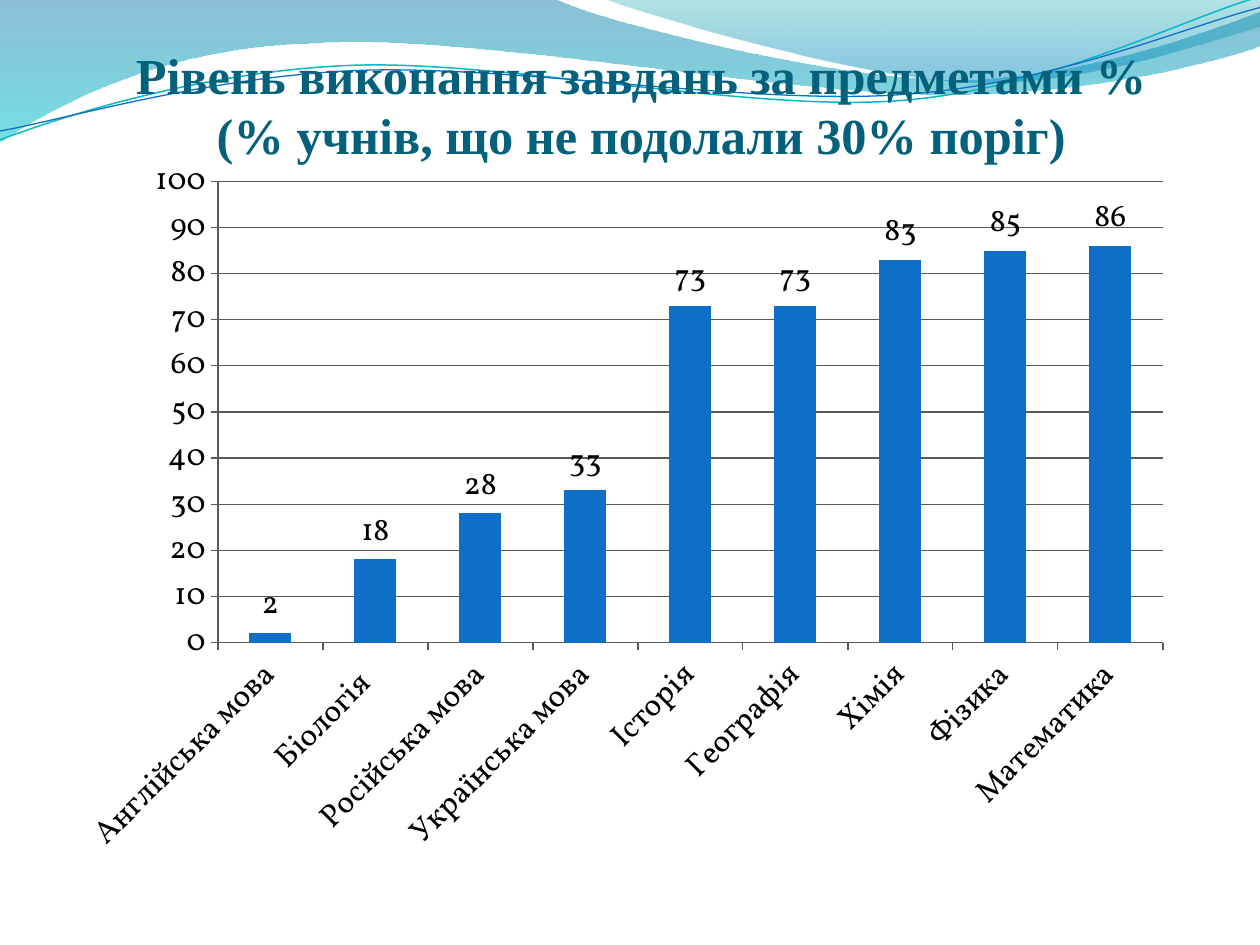
"""Build a slide with a column chart of subject results under a wave header."""
from dataclasses import dataclass

from lxml import etree
from pptx import Presentation
from pptx.chart.data import CategoryChartData
from pptx.dml.color import RGBColor
from pptx.enum.chart import XL_CHART_TYPE, XL_LABEL_POSITION, XL_TICK_MARK
from pptx.enum.text import MSO_ANCHOR, PP_ALIGN
from pptx.oxml.ns import qn
from pptx.util import Inches, Pt

COLUMN_CLUSTERED = XL_CHART_TYPE.COLUMN_CLUSTERED
OUTSIDE_END = XL_LABEL_POSITION.OUTSIDE_END
TICK_OUTSIDE = XL_TICK_MARK.OUTSIDE
TICK_NONE = XL_TICK_MARK.NONE
BOTTOM = MSO_ANCHOR.BOTTOM
CENTER = PP_ALIGN.CENTER


@dataclass(frozen=True)
class Theme:
    title_color: str = "04617B"
    accent: str = "0F6FC6"
    teal: str = "0AB8BF"
    text: str = "000000"
    axis: str = "595959"
    title_font: str = "Times New Roman"
    chart_font: str = "Vollkorn"
    title_size: float = 28.8
    chart_size: float = 18
    wide_wave: tuple = ((0, "0074A1", 45), (1, "00C6CF", 55))
    right_wave: tuple = ((0, "00A1A9", 30), (0.8, "008BBF", 45))


theme = Theme()
COLUMNS, ROWS = 10, 7.5
CELL = Inches(1)
TITLE_BOX = (0.59, 0.37, 9, 0.94)
CHART_BOX = (0.5, 1.15, 8.91, 5.77)
PLOT_BOX = (1.73, 1.44, 7.5, 3.66)

presentation = Presentation()
presentation.slide_width = int(COLUMNS * CELL)
presentation.slide_height = int(ROWS * CELL)
slide = presentation.slides.add_slide(presentation.slide_layouts[6])


def draw_outline(start, segments, close):
    """Add a freeform whose six-number segments are cubic curves."""
    ends = [(round(segment[-2] * CELL), round(segment[-1] * CELL)) for segment in segments]
    builder = slide.shapes.build_freeform(round(start[0] * CELL), round(start[1] * CELL))
    builder.add_line_segments(ends, close=close)
    shape = builder.convert_to_shape()
    shape.shadow.inherit = False
    for element, segment in zip(shape.element.xpath(".//a:path/a:lnTo"), segments):
        if len(segment) == 2:
            continue
        element.tag = qn("a:cubicBezTo")
        element.remove(element[0])
        for x, y in zip(segment[::2], segment[1::2]):
            point = etree.SubElement(element, qn("a:pt"))
            point.set("x", str(round(x * CELL) - shape.left))
            point.set("y", str(round(y * CELL) - shape.top))
    return shape


waves = [
    (theme.wide_wave, (0, 0), [
        (4.4, -0.01), (4.76, 0.17, 6.64, 0.63, 7.58, 0.63),
        (8.53, 0.63, 9.58, 0.26, 10, 0.09), (10.01, 0.36),
        (9.83, 0.44, 8.7, 0.76, 7.46, 0.75), (6.22, 0.75, 3.82, 0.28, 2.57, 0.34),
        (1.29, 0.36, 0.46, 0.83, -0.01, 1.13), (0, 0)]),
    (theme.right_wave, (4.79, -0.01), [
        (5.09, 0.11, 6.82, 0.62, 7.69, 0.65), (8.56, 0.69, 9.61, 0.32, 10, 0.21),
        (10, 0), (4.79, -0.01)]),
]
for stops, start, segments in waves:
    wave = draw_outline(start, segments, True)
    wave.line.fill.background()
    wave.fill.gradient()
    wave.fill.gradient_angle = 270
    for stop, (position, color, opacity) in zip(wave.fill.gradient_stops, stops):
        stop.position = position
        stop.color.rgb = RGBColor.from_string(color)
    for element, (position, color, opacity) in zip(
            wave.element.xpath(".//a:gs/a:srgbClr"), stops):
        etree.SubElement(element, qn("a:alpha")).set("val", str(opacity * 1000))

ribbons = [
    (theme.teal, 0.85, (0, 1.11), [
        (0.48, 0.93, 1.58, 0.57, 2.77, 0.52), (3.95, 0.47, 5.93, 0.89, 7.13, 0.8),
        (8.33, 0.71, 9.38, 0.15, 9.98, -0.02)]),
    (theme.accent, 0.75, (0, 1.04), [
        (0.47, 0.96, 1.64, 0.61, 2.83, 0.56), (4.03, 0.51, 5.97, 0.84, 7.17, 0.75),
        (8.36, 0.67, 9.41, 0.21, 10, 0.06)]),
]
for color, width, start, segments in ribbons:
    ribbon = draw_outline(start, segments, False)
    ribbon.fill.background()
    ribbon.line.color.rgb = RGBColor.from_string(color)
    ribbon.line.width = Pt(width)

title = slide.shapes.add_textbox(*(int(cells * CELL) for cells in TITLE_BOX))
frame = title.text_frame
frame.word_wrap = True
frame.vertical_anchor = BOTTOM
frame.margin_left = frame.margin_right = frame.margin_bottom = 0
frame.margin_top = int(0.05 * CELL)
paragraph = frame.paragraphs[0]
paragraph.text = "Рівень виконання завдань за предметами %\n(% учнів, що не подолали 30% поріг)"
paragraph.alignment = CENTER
for run in paragraph.runs:
    run.font.name = theme.title_font
    run.font.size = Pt(theme.title_size)
    run.font.bold = True
    run.font.color.rgb = RGBColor.from_string(theme.title_color)

results = {
    "Англійська мова": 2, "Біологія  ": 18, "Російська мова": 28,
    "Українська мова": 33, "Історія": 73, "Географія": 73,
    "Хімія": 83, "Фізика": 85, "Математика": 86,
}
chart_data = CategoryChartData()
chart_data.categories = list(results)
chart_data.add_series("Series 1", list(results.values()))
chart = slide.shapes.add_chart(
    COLUMN_CLUSTERED, *(int(cells * CELL) for cells in CHART_BOX), chart_data).chart
chart.has_legend = False
chart.has_title = False
chart.font.name = theme.chart_font
chart.font.size = Pt(theme.chart_size)
chart.font.color.rgb = RGBColor.from_string(theme.text)

plot = chart.plots[0]
plot.gap_width = 150
plot.vary_by_categories = False
plot.has_data_labels = True
plot.data_labels.show_value = True
plot.data_labels.position = OUTSIDE_END
bars = plot.series[0].format.fill
bars.solid()
bars.fore_color.rgb = RGBColor.from_string(theme.accent)

category_axis, value_axis = chart.category_axis, chart.value_axis
value_axis.minimum_scale, value_axis.maximum_scale = 0, 100
value_axis.major_unit = 10
value_axis.has_major_gridlines = True
for line in (category_axis.format.line, value_axis.format.line,
             value_axis.major_gridlines.format.line):
    line.color.rgb = RGBColor.from_string(theme.axis)
    line.width = Pt(0.75)
for axis in (category_axis, value_axis):
    axis.major_tick_mark = TICK_OUTSIDE
    axis.minor_tick_mark = TICK_NONE
    axis.tick_labels.font.size = Pt(theme.chart_size)
category_axis._element.xpath("./c:txPr/a:bodyPr")[0].set("rot", str(-45 * 60000))

plot_area = chart._chartSpace.xpath("./c:chart/c:plotArea")[0]
for old_layout in plot_area.xpath("./c:layout"):
    plot_area.remove(old_layout)
layout = etree.Element(qn("c:layout"))
plot_area.insert(0, layout)
manual = etree.SubElement(layout, qn("c:manualLayout"))
chart_left, chart_top, chart_width, chart_height = CHART_BOX
plot_left, plot_top, plot_width, plot_height = PLOT_BOX
for name, value in (
        ("layoutTarget", "inner"), ("xMode", "edge"), ("yMode", "edge"),
        ("x", (plot_left - chart_left) / chart_width),
        ("y", (plot_top - chart_top) / chart_height),
        ("w", plot_width / chart_width), ("h", plot_height / chart_height)):
    etree.SubElement(manual, qn(f"c:{name}")).set("val", str(value))

presentation.save("out.pptx")
